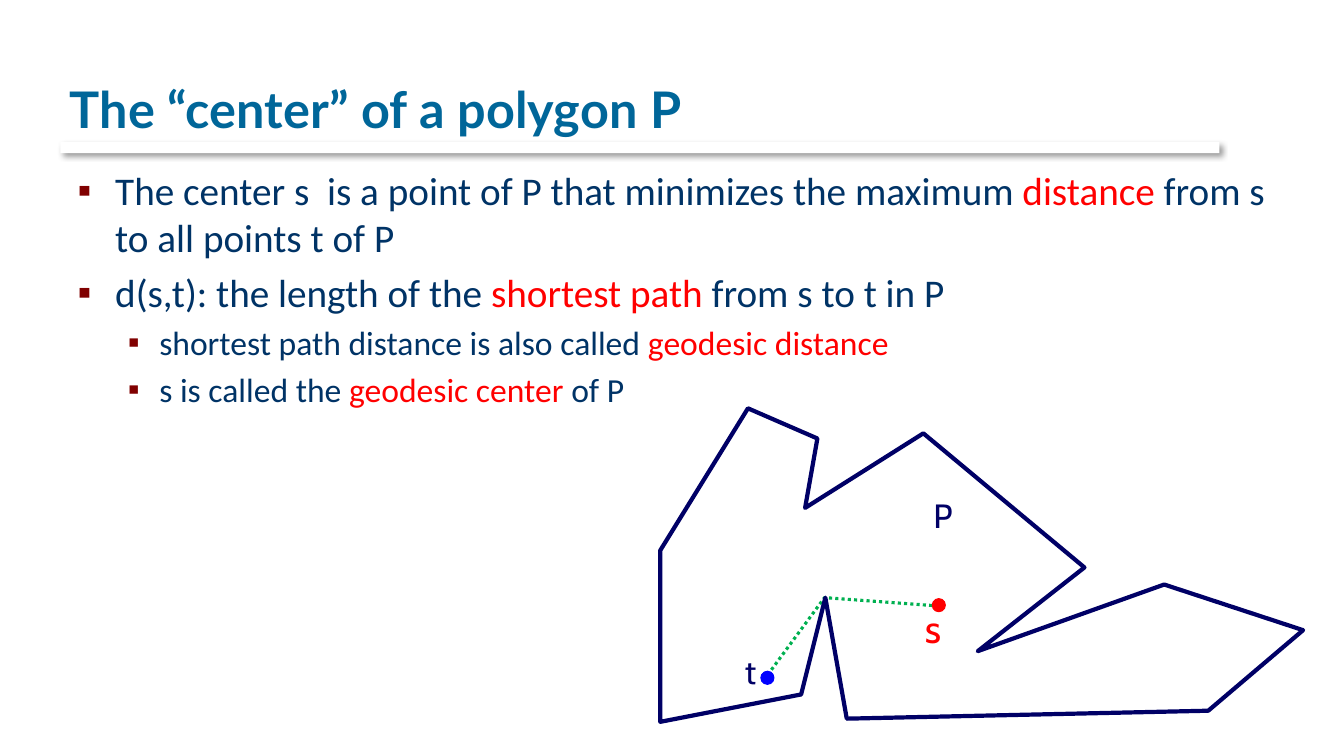
from dataclasses import dataclass

from lxml import etree
from pptx import Presentation
from pptx.dml.color import RGBColor
from pptx.enum.dml import MSO_LINE
from pptx.enum.shapes import MSO_SHAPE
from pptx.enum.text import MSO_ANCHOR, MSO_AUTO_SIZE, PP_ALIGN
from pptx.oxml.ns import qn
from pptx.util import Cm, Pt

RECT, OVAL = MSO_SHAPE.RECTANGLE, MSO_SHAPE.OVAL
DOTTED = MSO_LINE.ROUND_DOT
LEFT, BOTTOM, TOP = PP_ALIGN.LEFT, MSO_ANCHOR.BOTTOM, MSO_ANCHOR.TOP
NO_FIT = MSO_AUTO_SIZE.NONE

TEAL = RGBColor(0x00, 0x66, 0x99)
NAVY = RGBColor(0x00, 0x33, 0x66)
INK = RGBColor(0x00, 0x00, 0x66)
RED = RGBColor(0xFF, 0x00, 0x00)
BLUE = RGBColor(0x00, 0x00, 0xFF)
GREEN = RGBColor(0x00, 0xB0, 0x50)
MAROON = RGBColor(0x80, 0x00, 0x00)
WHITE = RGBColor(0xFF, 0xFF, 0xFF)

DOT_SIZE = 0.33


@dataclass
class Bullet:
    level: int
    before: str
    key: str
    after: str = ""


@dataclass
class Label:
    text: str
    box: tuple[float, float, float, float]
    size: int
    color: RGBColor


@dataclass
class Dot:
    x: float
    y: float
    color: RGBColor


@dataclass
class Outline:
    points: list[tuple[float, float]]
    color: RGBColor
    width: float
    closed: bool


@dataclass
class LevelStyle:
    size: int
    margin: float
    hanging: float


LEVELS = [LevelStyle(28, 0.95, 0.95), LevelStyle(24, 2.06, 0.79)]

BULLETS = [
    Bullet(0, "The center s  is a point of P that minimizes the maximum ",
           "distance", " from s to all points t of P"),
    Bullet(0, "d(s,t): the length of the ", "shortest path ",
           "from s to t in P"),
    Bullet(1, "shortest path distance is also called ", "geodesic distance"),
    Bullet(1, "s is called the ", "geodesic center ", "of P"),
]

SHORTEST_PATH = Outline(
    [(23.65, 15.27), (20.78, 15.06), (19.3, 17.07)], GREEN, 2.25, False)
POLYGON = Outline(
    [(16.64, 13.87), (18.85, 10.29), (20.6, 11.05), (20.29, 12.8),
     (23.27, 10.92), (27.33, 14.3), (24.64, 16.41), (29.34, 14.73),
     (32.84, 15.88), (30.45, 17.91), (21.34, 18.11), (20.8, 15.06),
     (20.19, 17.5), (16.64, 18.19)], INK, 3, True)

DOTS = [Dot(23.66, 15.25, RED), Dot(19.34, 17.08, BLUE)]
LABELS = [
    Label("P", (23.27, 12.34, 0.94, 1.27), 24, INK),
    Label("s", (23.06, 15.11, 0.89, 1.45), 28, RED),
    Label("t", (18.52, 16.28, 0.79, 1.27), 24, INK),
]


def add_run(p, text: str, *, font: str, size: float, color: RGBColor,
            bold: bool = False):
    r = p.add_run()
    r.text = text
    r.font.name, r.font.size, r.font.bold = font, Pt(size), bold
    r.font.color.rgb = color
    return r


def place(sp, left: float, top: float, width: float, height: float) -> None:
    sp.left, sp.top = Cm(left), Cm(top)
    sp.width, sp.height = Cm(width), Cm(height)


def set_bullet(p, style: LevelStyle) -> None:
    p.space_before = Pt(style.size * 0.2)
    pPr = p._p.get_or_add_pPr()
    pPr.set("marL", str(Cm(style.margin)))
    pPr.set("indent", str(-Cm(style.hanging)))
    clr = etree.SubElement(pPr, qn("a:buClr"))
    etree.SubElement(clr, qn("a:srgbClr"), val=str(MAROON))
    etree.SubElement(pPr, qn("a:buChar"), char="▪")


def fill_title(sp) -> None:
    place(sp, 1.5, 0.43, 28.78, 3.18)
    tf = sp.text_frame
    tf.vertical_anchor, tf.auto_size = BOTTOM, NO_FIT
    p = tf.paragraphs[0]
    p.alignment = LEFT
    r = add_run(p, "The “center” of a polygon P", font="Lato", size=36,
                color=TEAL, bold=True)
    r._r.get_or_add_rPr().set("spc", "10")


def fill_body(sp) -> None:
    place(sp, 1.7, 4.06, 30.94, 3.84)
    tf = sp.text_frame
    tf.vertical_anchor, tf.auto_size = TOP, NO_FIT
    for i, item in enumerate(BULLETS):
        p = tf.add_paragraph() if i else tf.paragraphs[0]
        p.level = item.level
        style = LEVELS[item.level]
        set_bullet(p, style)
        for text, color in ((item.before, NAVY), (item.key, RED),
                            (item.after, NAVY)):
            if text:
                add_run(p, text, font="Calibri", size=style.size, color=color)


def add_rule(shapes) -> None:
    """Add the white bar whose soft shadow underlines the title."""
    sp = shapes.add_shape(RECT, Cm(1.52), Cm(3.58), Cm(29.21), Cm(0.28))
    sp.fill.solid()
    sp.fill.fore_color.rgb = WHITE
    sp.line.fill.background()
    sp.shadow.inherit = False
    effects = sp._element.spPr.find(qn("a:effectLst"))
    shadow = etree.SubElement(effects, qn("a:outerShdw"), blurRad=str(Pt(4)),
                              dist=str(Pt(3)), dir="2700000", algn="tl",
                              rotWithShape="0")
    clr = etree.SubElement(shadow, qn("a:srgbClr"), val="000000")
    etree.SubElement(clr, qn("a:alpha"), val="40000")


def add_outline(shapes, outline: Outline):
    points = [(Cm(x), Cm(y)) for x, y in outline.points]
    builder = shapes.build_freeform(*points[0])
    builder.add_line_segments(points[1:], close=outline.closed)
    sp = builder.convert_to_shape()
    sp.fill.background()
    sp.line.color.rgb = outline.color
    sp.line.width = Pt(outline.width)
    sp.shadow.inherit = False
    return sp


def add_dot(shapes, dot: Dot) -> None:
    sp = shapes.add_shape(OVAL, Cm(dot.x - DOT_SIZE / 2),
                          Cm(dot.y - DOT_SIZE / 2), Cm(DOT_SIZE), Cm(DOT_SIZE))
    sp.fill.solid()
    sp.fill.fore_color.rgb = sp.line.color.rgb = dot.color
    sp.line.width = Pt(0.75)
    sp.shadow.inherit = False


def add_label(shapes, label: Label) -> None:
    tf = shapes.add_textbox(*map(Cm, label.box)).text_frame
    tf.word_wrap = False
    add_run(tf.paragraphs[0], label.text, font="Cabin", size=label.size,
            color=label.color)


def main() -> None:
    prs = Presentation()
    prs.slide_width, prs.slide_height = Cm(33.87), Cm(19.05)
    s = prs.slides.add_slide(prs.slide_layouts[1])
    fill_title(s.shapes.title)
    fill_body(s.placeholders[1])
    add_rule(s.shapes)
    add_outline(s.shapes, SHORTEST_PATH).line.dash_style = DOTTED
    add_outline(s.shapes, POLYGON)
    for dot in DOTS:
        add_dot(s.shapes, dot)
    for label in LABELS:
        add_label(s.shapes, label)
    prs.save("out.pptx")


if __name__ == "__main__":
    main()
